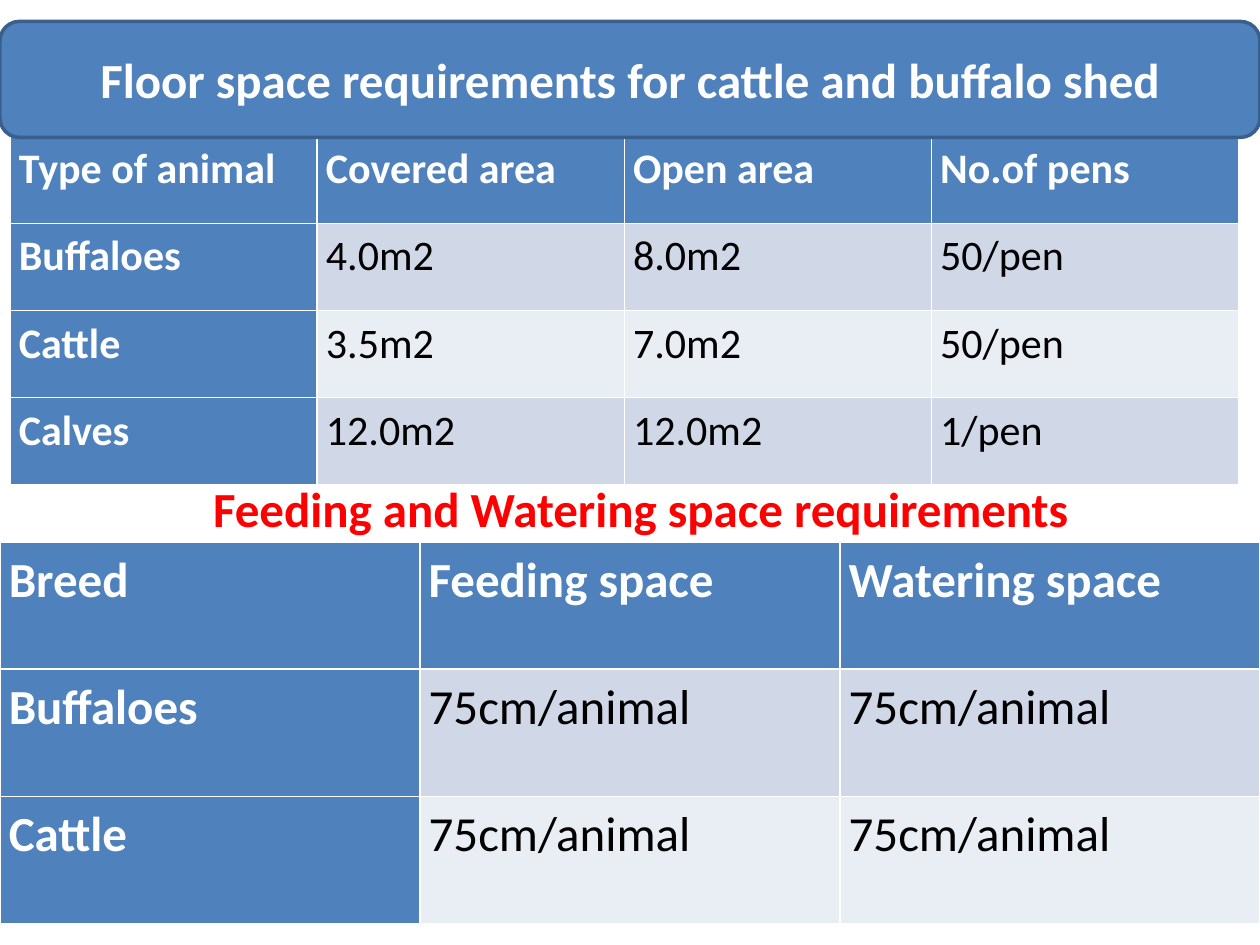
from dataclasses import dataclass

from pptx import Presentation
from pptx.dml.color import RGBColor
from pptx.enum import shapes, text
from pptx.util import Inches, Pt

FONT = "Calibri"
COLORS = {
    "blue": "4F81BD",
    "edge": "3A5F8C",
    "odd": "D0D8E8",
    "even": "E9EDF4",
    "white": "FFFFFF",
    "black": "000000",
    "red": "FF0000",
}


@dataclass
class Grid:
    left: float
    top: float
    width: float
    height: float
    size: int
    rows: list[list[str]]


FLOOR = Grid(0.08, 1.08, 9.75, 2.77, 24, [
    ["Type of animal", "Covered area", "Open area", "No.of pens"],
    ["Buffaloes", "4.0m2", "8.0m2", "50/pen"],
    ["Cattle", "3.5m2", "7.0m2", "50/pen"],
    ["Calves", "12.0m2", "12.0m2", "1/pen"],
])
FEED = Grid(0, 4.3, 10, 3.03, 28, [
    ["Breed", "Feeding space", "Watering space"],
    ["Buffaloes", "75cm/animal", "75cm/animal"],
    ["Cattle", "75cm/animal", "75cm/animal"],
])


def rgb(name: str) -> RGBColor:
    return RGBColor.from_string(COLORS[name])


def style(para, size: int, color: str, bold: bool) -> None:
    for run in para.runs:
        font = run.font
        font.name, font.size, font.bold = FONT, Pt(size), bold
        font.color.rgb = rgb(color)


def draw_grid(slide, grid: Grid) -> None:
    table = slide.shapes.add_table(
        len(grid.rows), len(grid.rows[0]), Inches(grid.left), Inches(grid.top),
        Inches(grid.width), Inches(grid.height)).table
    table.first_col = True
    for r, row in enumerate(grid.rows):
        for c, words in enumerate(row):
            cell = table.cell(r, c)
            head = r == 0 or c == 0
            band = "odd" if r % 2 else "even"
            cell.fill.solid()
            cell.fill.fore_color.rgb = rgb("blue" if head else band)
            cell.margin_left = cell.margin_right = Inches(0.07)
            cell.margin_top = cell.margin_bottom = 0
            cell.text_frame.text = words
            para = cell.text_frame.paragraphs[0]
            para.line_spacing = 1.15
            style(para, grid.size, "white" if head else "black", head)


def set_label(shape, words: str, color: str) -> None:
    frame = shape.text_frame
    frame.word_wrap = True
    frame.vertical_anchor = text.MSO_ANCHOR.MIDDLE
    frame.text = words
    para = frame.paragraphs[0]
    para.alignment = text.PP_ALIGN.CENTER
    style(para, 28, color, True)


def main() -> None:
    prs = Presentation()
    prs.slide_width, prs.slide_height = Inches(10), Inches(7.5)
    slide = prs.slides.add_slide(prs.slide_layouts[6])

    # Floor space table, with the banner over its top edge
    draw_grid(slide, FLOOR)
    banner = slide.shapes.add_shape(
        shapes.MSO_SHAPE.ROUNDED_RECTANGLE,
        Inches(0), Inches(0.17), Inches(10), Inches(0.92))
    banner.shadow.inherit = False
    banner.fill.solid()
    banner.fill.fore_color.rgb = rgb("blue")
    banner.line.color.rgb = rgb("edge")
    banner.line.width = Pt(2)
    set_label(banner, "Floor space requirements for cattle and buffalo shed", "white")

    # Feeding and watering table, with its heading
    draw_grid(slide, FEED)
    heading = slide.shapes.add_textbox(
        Inches(0.17), Inches(3.75), Inches(9.83), Inches(0.81))
    set_label(heading, "Feeding and Watering space requirements", "red")
    heading.text_frame.margin_bottom = Inches(0.29)

    prs.save("out.pptx")


if __name__ == "__main__":
    main()
